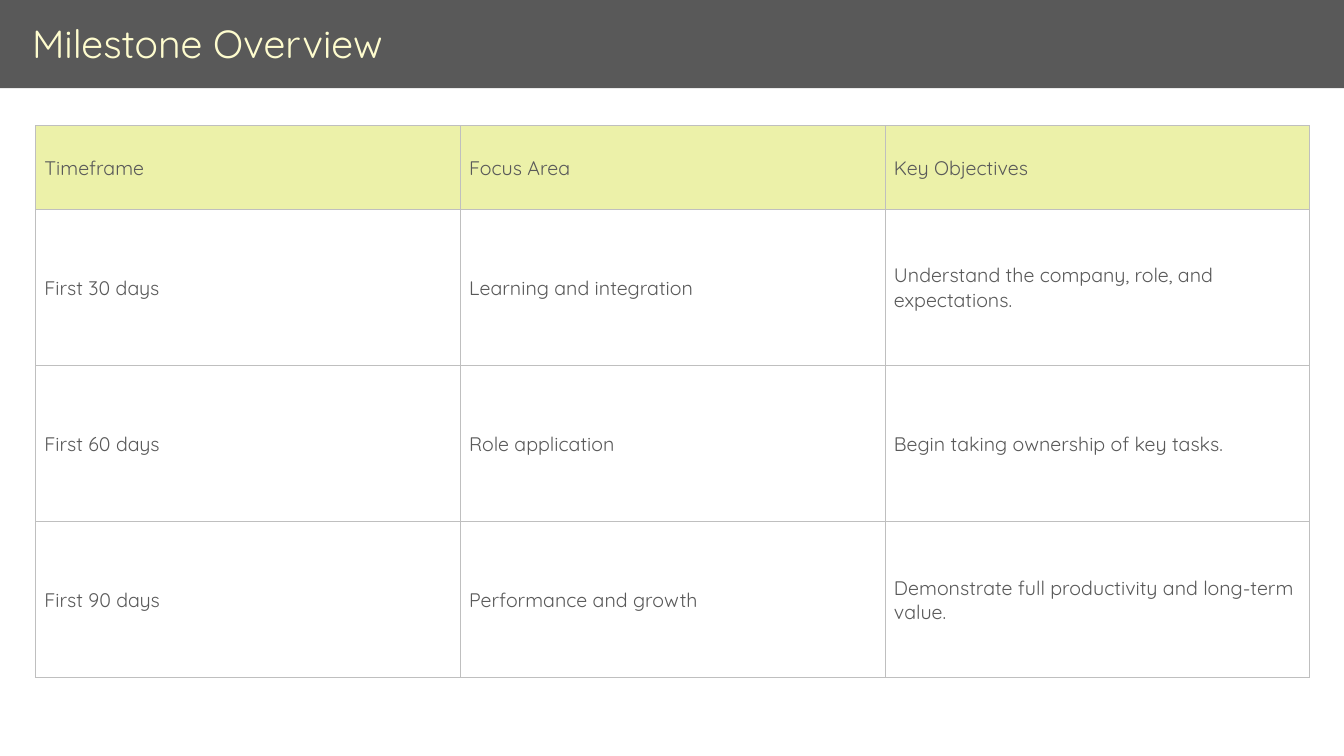
from dataclasses import dataclass

from lxml.etree import SubElement
from pptx import Presentation
from pptx.dml.color import RGBColor as RGB
from pptx.enum.shapes import MSO_SHAPE as SHAPE
from pptx.enum.text import MSO_ANCHOR as ANCHOR, MSO_AUTO_SIZE as AUTO
from pptx.oxml.ns import qn
from pptx.util import Inches, Pt


@dataclass(frozen=True)
class Theme:
    font: str = "Quicksand"
    dark: str = "595959"
    cream: str = "FEFCCE"
    lime: str = "ECF1A9"
    rule: str = "BFBFBF"
    title_size: int = 28
    cell_size: int = 14
    rule_width: float = 0.5


class Deck:
    """Holds the theme and slide; lengths are percentages of the slide."""

    def __init__(self, theme):
        self.theme = theme
        self.prs = Presentation()
        self.prs.slide_width, self.prs.slide_height = Inches(13.33), Inches(7.5)
        self.s = self.prs.slides.add_slide(self.prs.slide_layouts[6])

    def x(self, share):
        return round(self.prs.slide_width * share / 100)

    def y(self, share):
        return round(self.prs.slide_height * share / 100)

    def place(self, left, top, width, height):
        return self.x(left), self.y(top), self.x(width), self.y(height)

    def set_text(self, tf, text, size, color):
        tf.text = text
        tf.word_wrap = True
        for r in tf.paragraphs[0].runs:
            r.font.name = self.theme.font
            r.font.size = Pt(size)
            r.font.bold = False
            r.font.color.rgb = RGB.from_string(color)

    def band(self, box, color):
        sp = self.s.shapes.add_shape(SHAPE.RECTANGLE, *self.place(*box))
        sp.shadow.inherit = False
        sp.fill.solid()
        sp.fill.fore_color.rgb = RGB.from_string(color)
        sp.line.fill.background()

    def title(self, box, text):
        sp = self.s.shapes.add_textbox(*self.place(*box))
        self.set_text(sp.text_frame, text, self.theme.title_size, self.theme.cream)
        sp.text_frame.auto_size = AUTO.SHAPE_TO_FIT_TEXT

    def borders(self, cell):
        tc_pr = cell._tc.get_or_add_tcPr()
        for side in ("lnL", "lnR", "lnT", "lnB"):
            ln = SubElement(tc_pr, qn(f"a:{side}"), w=str(Pt(self.theme.rule_width)))
            fill = SubElement(ln, qn("a:solidFill"))
            SubElement(fill, qn("a:srgbClr"), val=self.theme.rule)

    def table(self, left, top, width, heights, rows):
        box = self.place(left, top, width, sum(heights))
        table = self.s.shapes.add_table(len(rows), len(rows[0]), *box).table
        table.horz_banding = False
        for row, height in zip(table.rows, heights):
            row.height = self.y(height)
        for i, texts in enumerate(rows):
            for j, text in enumerate(texts):
                self.cell(table.cell(i, j), text, header=i == 0)

    def cell(self, cell, text, header):
        self.set_text(cell.text_frame, text, self.theme.cell_size, self.theme.dark)
        cell.vertical_anchor = ANCHOR.MIDDLE
        cell.margin_left = Inches(0.09)
        cell.margin_top = cell.margin_right = Inches(0.01)
        cell.margin_bottom = 0
        # Borders come before the fill in the cell's XML
        self.borders(cell)
        if header:
            cell.fill.solid()
            cell.fill.fore_color.rgb = RGB.from_string(self.theme.lime)
        else:
            cell.fill.background()


MILESTONES = [
    ("Timeframe", "Focus Area", "Key Objectives"),
    ("First 30 days", "Learning and integration",
     "Understand the company, role, and expectations."),
    ("First 60 days", "Role application", "Begin taking ownership of key tasks."),
    ("First 90 days", "Performance and growth",
     "Demonstrate full productivity and long-term value."),
]


def main():
    deck = Deck(Theme())
    # Title band
    deck.band((0, 0, 100, 11.67), deck.theme.dark)
    deck.title((1.65, 1.87, 60.6, 7.6), "Milestone Overview")
    # Milestone table: one header row and three equal rows
    deck.table(2.63, 16.63, 94.82, [11.05] + [20.65] * 3, MILESTONES)
    deck.prs.save("out.pptx")


if __name__ == "__main__":
    main()
